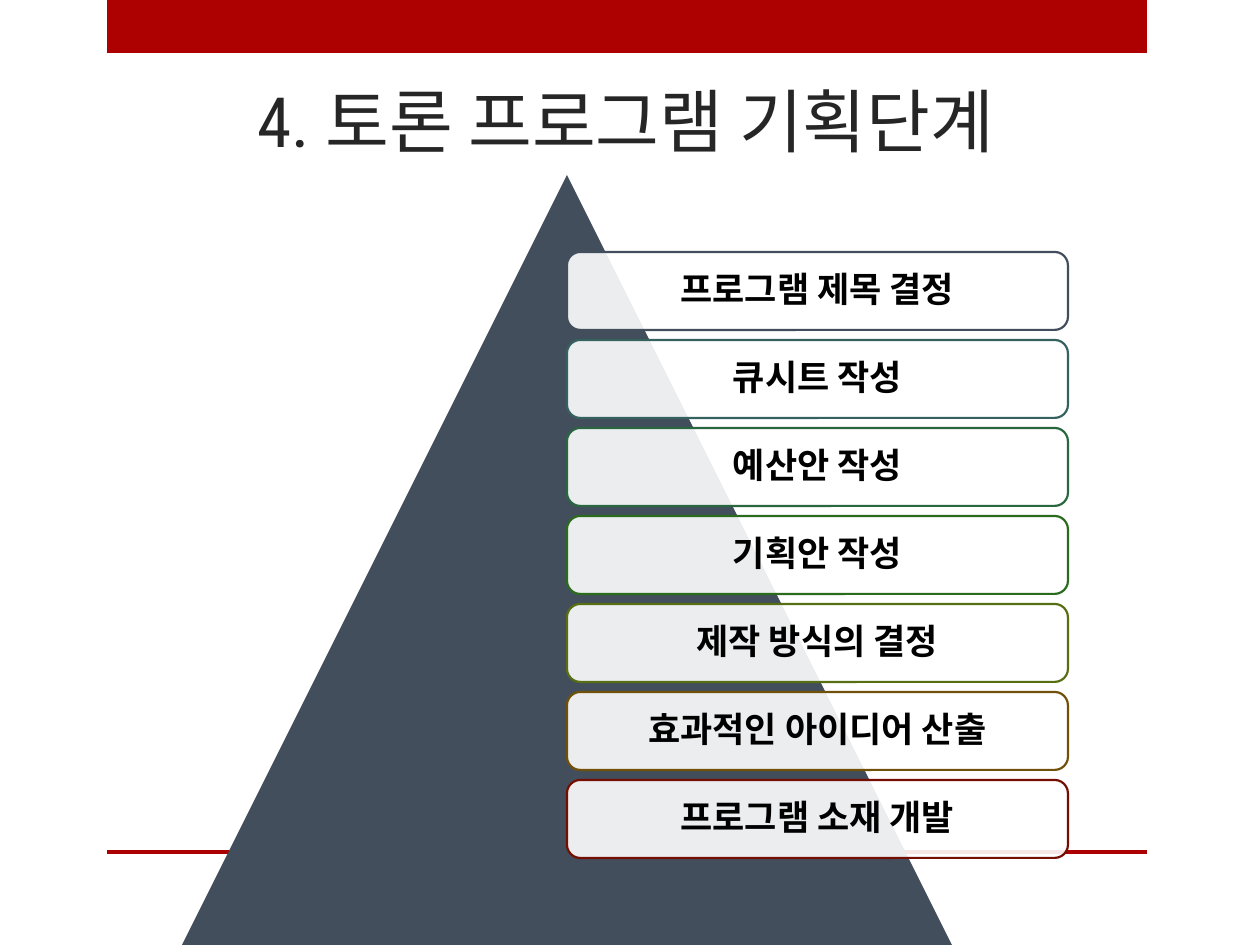
from dataclasses import dataclass

from lxml import etree
from pptx import Presentation
from pptx.dml.color import RGBColor
from pptx.enum.shapes import MSO_SHAPE
from pptx.enum.text import MSO_ANCHOR, MSO_AUTO_SIZE, PP_ALIGN
from pptx.oxml.ns import qn
from pptx.util import Emu, Pt

RECTANGLE = MSO_SHAPE.RECTANGLE
TRIANGLE = MSO_SHAPE.ISOSCELES_TRIANGLE
ROUNDED = MSO_SHAPE.ROUNDED_RECTANGLE
CENTER = PP_ALIGN.CENTER
MIDDLE = MSO_ANCHOR.MIDDLE
BOTTOM = MSO_ANCHOR.BOTTOM
NO_AUTOFIT = MSO_AUTO_SIZE.NONE

EMU_PER_PX = 914400 / 126
KOREAN_FONT = "Noto Sans CJK KR"
TITLE_FONT = "Roboto Condensed"
RED = "AD0101"
SLATE = "424E5B"
TITLE_ONLY_LAYOUT = 5
FIRST_STEP_TOP = 252
STEP_PITCH = 88


@dataclass
class Box:
    left: int
    top: int
    width: int
    height: int


@dataclass
class Step:
    text: str
    outline: str


STEPS = [
    Step("프로그램 제목 결정", SLATE),
    Step("큐시트 작성", "35615F"),
    Step("예산안 작성", "286740"),
    Step("기획안 작성", "2B6B1D"),
    Step("제작 방식의 결정", "576F12"),
    Step("효과적인 아이디어 산출", "715109"),
    Step("프로그램 소재 개발", "730E00"),
]


def px(length: int) -> Emu:
    return Emu(round(length * EMU_PER_PX))


def color(hex_value: str) -> RGBColor:
    return RGBColor.from_string(hex_value)


def add_filled_shape(slide, kind, box: Box, fill: str):
    shape = slide.shapes.add_shape(
        kind, px(box.left), px(box.top), px(box.width), px(box.height)
    )
    shape.shadow.inherit = False
    shape.fill.solid()
    shape.fill.fore_color.rgb = color(fill)
    shape.line.fill.background()
    return shape


def set_opacity(shape, percent: int) -> None:
    fill_color = shape.fill._xPr.find(qn("a:solidFill"))[0]
    etree.SubElement(fill_color, qn("a:alpha")).set("val", str(percent * 1000))


def add_run(paragraph, text: str, font: str, size: float, hex_value: str, bold: bool) -> None:
    run = paragraph.add_run()
    run.text = text
    run.font.name = font
    run.font.size = Pt(size)
    run.font.bold = bold
    run.font.color.rgb = color(hex_value)
    east_asian = etree.SubElement(run.font._element, qn("a:ea"))
    east_asian.set("typeface", KOREAN_FONT)


def add_title(slide, text: str, box: Box) -> None:
    title = slide.shapes.title
    title.left, title.top = px(box.left), px(box.top)
    title.width, title.height = px(box.width), px(box.height)
    frame = title.text_frame
    frame.word_wrap = True
    frame.auto_size = NO_AUTOFIT
    frame.vertical_anchor = BOTTOM
    paragraph = frame.paragraphs[0]
    paragraph.alignment = CENTER
    add_run(paragraph, text, TITLE_FONT, 39.6, "262626", False)


def add_step(slide, step: Step, top: int) -> None:
    shape = add_filled_shape(slide, ROUNDED, Box(567, top, 501, 78), "FFFFFF")
    shape.adjustments[0] = 0.17
    set_opacity(shape, 90)
    shape.line.color.rgb = color(step.outline)
    shape.line.width = Pt(1.25)
    frame = shape.text_frame
    frame.word_wrap = True
    frame.vertical_anchor = MIDDLE
    frame.margin_left = frame.margin_right = px(14)
    frame.margin_top = frame.margin_bottom = px(10)
    paragraph = frame.paragraphs[0]
    paragraph.alignment = CENTER
    paragraph.line_spacing = 0.9
    paragraph.space_after = Pt(7)
    add_run(paragraph, step.text, KOREAN_FONT, 20, "000000", True)


def main() -> None:
    presentation = Presentation()
    presentation.slide_width = px(1260)
    presentation.slide_height = px(945)
    slide = presentation.slides.add_slide(presentation.slide_layouts[TITLE_ONLY_LAYOUT])
    add_title(slide, "4. 토론 프로그램 기획단계", Box(105, 66, 1041, 102))
    add_filled_shape(slide, RECTANGLE, Box(107, 0, 1040, 53), RED)
    add_filled_shape(slide, RECTANGLE, Box(107, 850, 1040, 4), RED)
    add_filled_shape(slide, TRIANGLE, Box(182, 175, 770, 770), SLATE)
    for index, step in enumerate(STEPS):
        add_step(slide, step, FIRST_STEP_TOP + index * STEP_PITCH)
    presentation.save("out.pptx")


if __name__ == "__main__":
    main()
